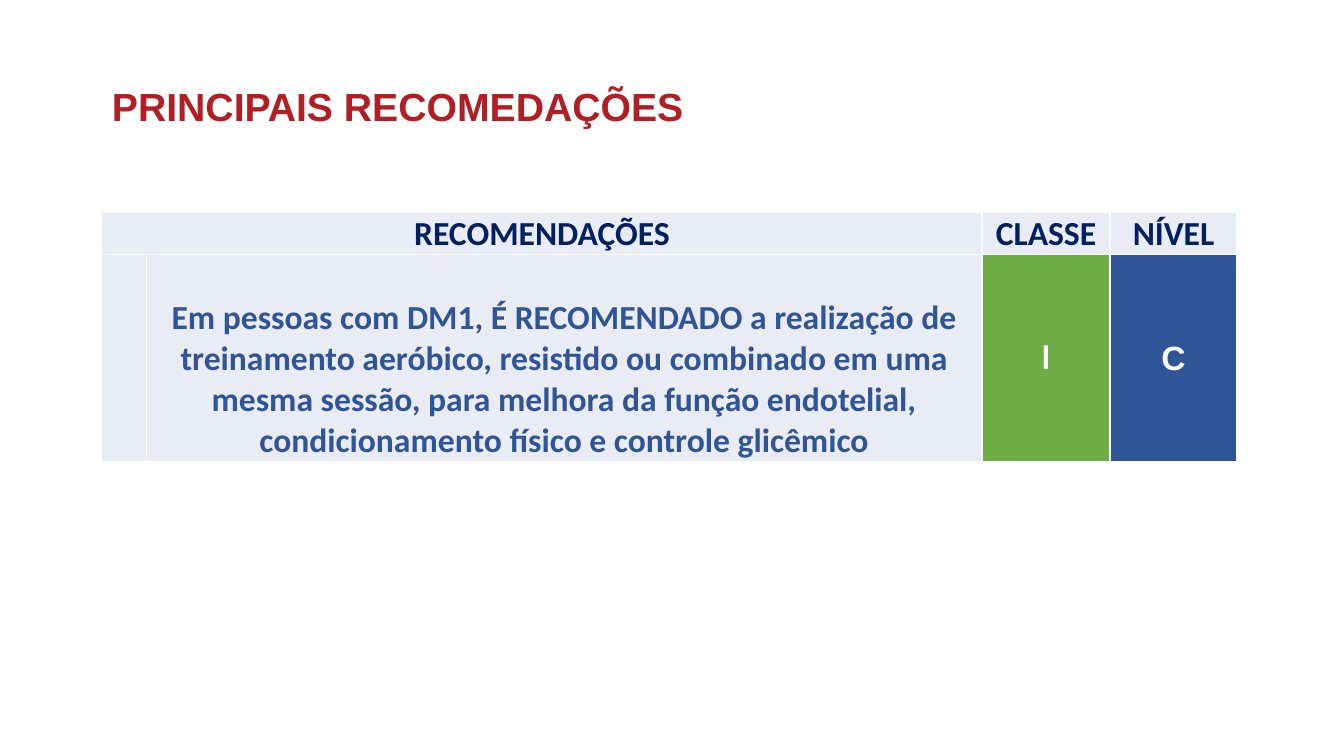
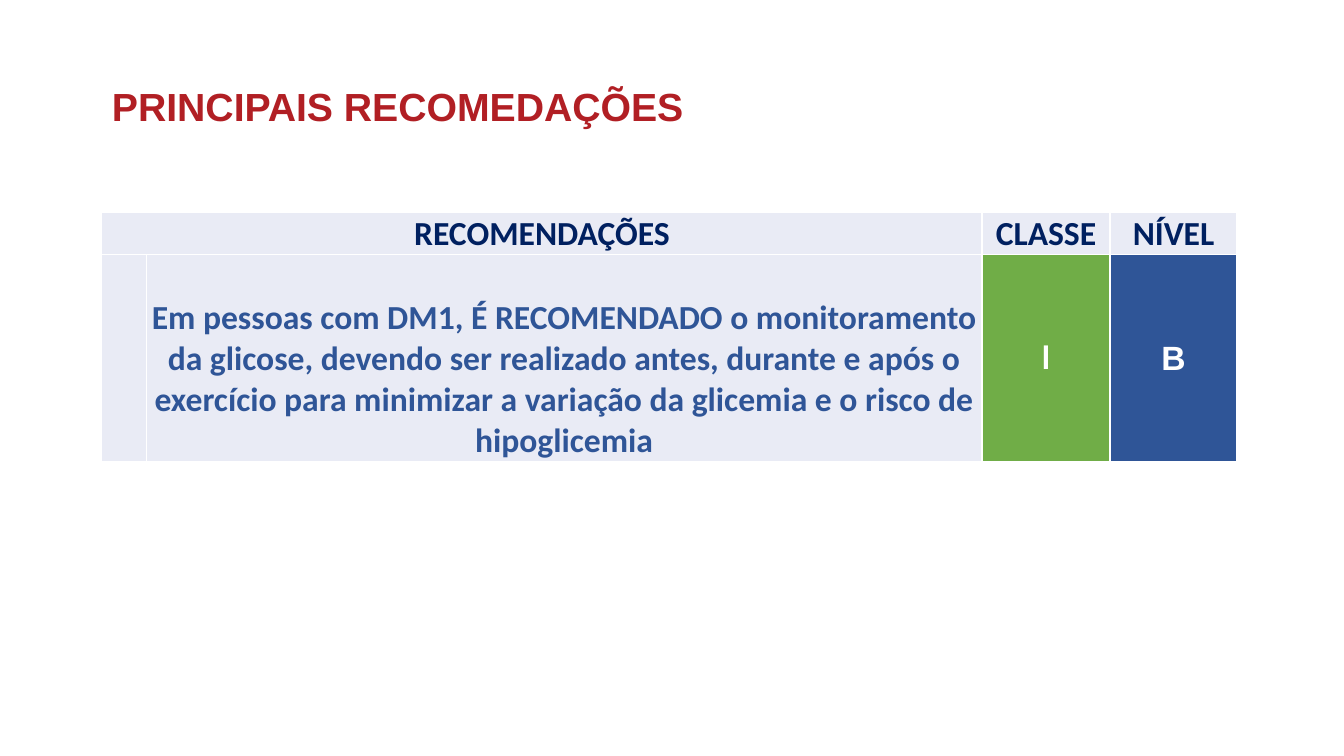
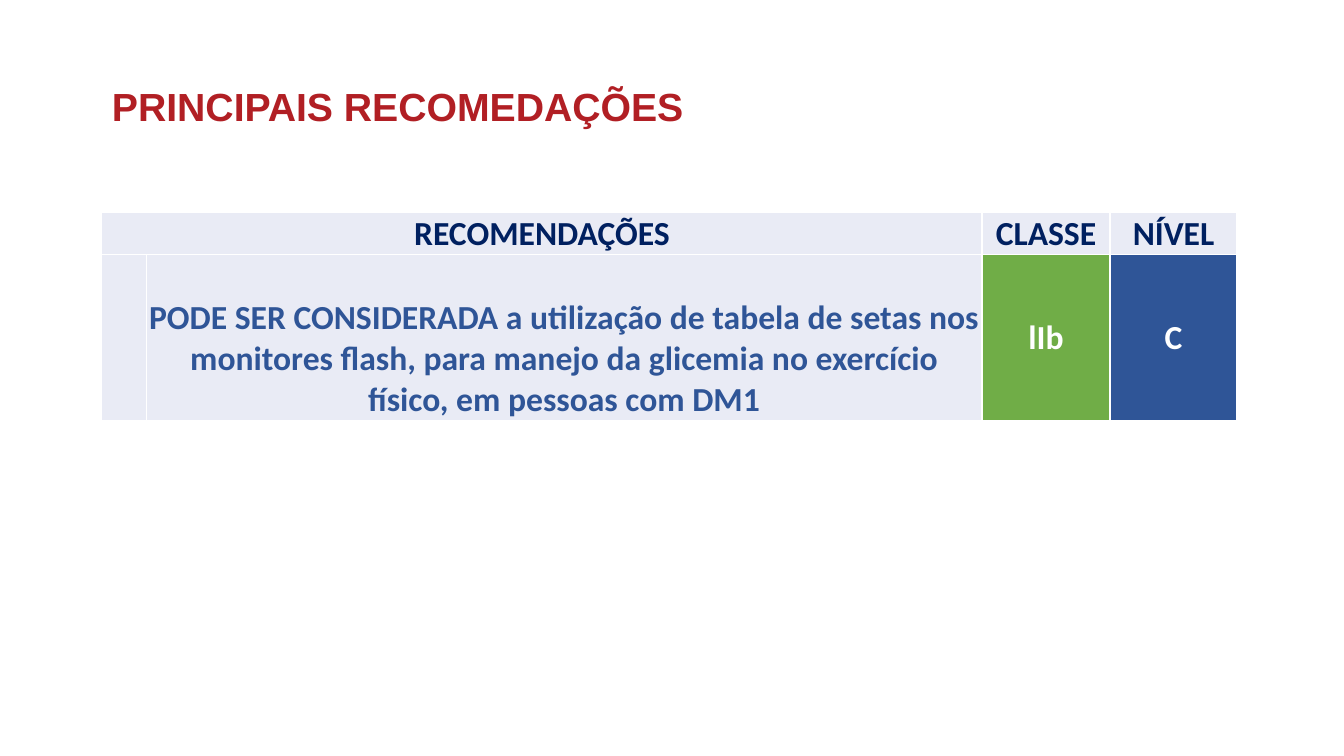
from dataclasses import dataclass

from lxml import etree
from pptx import Presentation
from pptx.dml.color import RGBColor
from pptx.enum.text import MSO_ANCHOR, MSO_AUTO_SIZE, PP_ALIGN
from pptx.oxml.ns import qn
from pptx.slide import Slide
from pptx.table import _Cell
from pptx.text.text import _Paragraph
from pptx.util import Inches, Pt

LEFT, CENTER = PP_ALIGN.LEFT, PP_ALIGN.CENTER
MIDDLE, BOTTOM = MSO_ANCHOR.MIDDLE, MSO_ANCHOR.BOTTOM
NO_AUTOFIT = MSO_AUTO_SIZE.NONE

RED = RGBColor(0xB1, 0x1F, 0x24)
NAVY = RGBColor(0x00, 0x20, 0x60)
BLUE = RGBColor(0x2F, 0x55, 0x97)
GREEN = RGBColor(0x70, 0xAD, 0x47)
PALE = RGBColor(0xE9, 0xEB, 0xF5)
WHITE = RGBColor(0xFF, 0xFF, 0xFF)

SLIDE_W, SLIDE_H = Inches(13.33), Inches(7.5)
TITLE = "PRINCIPAIS RECOMEDAÇÕES"
HEADERS = {1: "RECOMENDAÇÕES", 2: "CLASSE", 3: "NÍVEL"}
BORDERS = ("a:lnL", "a:lnR", "a:lnT", "a:lnB")


def across(percent: float) -> int:
    return round(SLIDE_W * percent / 100)


def down(percent: float) -> int:
    return round(SLIDE_H * percent / 100)


MARGIN, CONTENT_W = across(7.58), across(84.47)
TITLE_TOP, TITLE_H = down(11.07), down(6.53)
TABLE_TOP, LINE_H = down(28.13), down(5.47)
COL_WIDTHS = [across(share) for share in (3.3, 62.19, 9.53, 9.45)]

TITLE_FONT = {"name": "Arial", "size": Pt(28), "bold": True}
CELL_FONT = {"name": "Calibri", "size": Pt(24), "bold": True}
CELL_MARGINS = {
    "margin_left": Inches(0.01),
    "margin_right": Inches(0.01),
    "margin_top": Inches(0.01),
    "margin_bottom": 0,
}


@dataclass(frozen=True)
class Recommendation:
    text: str
    lines: int
    grade: str
    level: str
    level_font: str = "Arial"


RECOMMENDATIONS = (
    Recommendation(
        "Em pessoas com DM1, É RECOMENDADO a realização de treinamento "
        "aeróbico, resistido ou combinado em uma mesma sessão, para melhora "
        "da função endotelial, condicionamento físico e controle glicêmico",
        4, "l", "C",
    ),
    Recommendation(
        "Em pessoas com DM1, É RECOMENDADO o monitoramento da glicose, "
        "devendo ser realizado antes, durante e após o exercício para "
        "minimizar a variação da glicemia e o risco de hipoglicemia",
        4, "l", "B",
    ),
    Recommendation(
        "PODE SER CONSIDERADA a utilização de tabela de setas nos monitores "
        "flash, para manejo da glicemia no exercício físico, em pessoas com DM1",
        3, "lIb", "C", "Calibri",
    ),
)


def write(p: _Paragraph, text: str, align: PP_ALIGN, color: RGBColor, font: dict) -> None:
    p.alignment = align
    r = p.add_run()
    r.text = text
    for name, value in font.items():
        setattr(r.font, name, value)
    r.font.color.rgb = color


def add_title(s: Slide) -> None:
    sp = s.shapes.title
    sp.left, sp.top, sp.width, sp.height = MARGIN, TITLE_TOP, CONTENT_W, TITLE_H
    tf = sp.text_frame
    tf.word_wrap = True
    tf.auto_size = NO_AUTOFIT
    tf.vertical_anchor = MIDDLE
    p = tf.paragraphs[0]
    p.line_spacing = 0.9
    write(p, TITLE, LEFT, RED, TITLE_FONT)


def style_cell(cell: _Cell, fill: RGBColor, anchor: MSO_ANCHOR) -> None:
    cell.fill.solid()
    cell.fill.fore_color.rgb = fill
    cell.vertical_anchor = anchor
    for name, value in CELL_MARGINS.items():
        setattr(cell, name, value)
    tc_pr = cell.fill._xPr
    for i, tag in enumerate(BORDERS):
        ln = etree.Element(qn(tag), w=str(Pt(1)))
        solid = etree.SubElement(ln, qn("a:solidFill"))
        etree.SubElement(solid, qn("a:srgbClr"), val=str(WHITE))
        tc_pr.insert(i, ln)


def add_recommendation(s: Slide, rec: Recommendation) -> None:
    heights = (LINE_H, LINE_H * (rec.lines + 1))
    table = s.shapes.add_table(
        2, len(COL_WIDTHS), MARGIN, TABLE_TOP, sum(COL_WIDTHS), sum(heights)
    ).table
    table.first_row = table.horz_banding = False
    for col, width in zip(table.columns, COL_WIDTHS):
        col.width = width
    for row, height in zip(table.rows, heights):
        row.height = height
    for cell in table.iter_cells():
        style_cell(cell, PALE, BOTTOM)

    table.cell(0, 0).merge(table.cell(0, 1))
    for col, text in HEADERS.items():
        cell = table.cell(0, 0 if col == 1 else col)
        write(cell.text_frame.paragraphs[0], text, CENTER, NAVY, CELL_FONT)

    level_font = CELL_FONT | {"name": rec.level_font}
    body = (
        (rec.text, PALE, BOTTOM, BLUE, CELL_FONT),
        (rec.grade, GREEN, MIDDLE, WHITE, CELL_FONT),
        (rec.level, BLUE, MIDDLE, WHITE, level_font),
    )
    for col, (text, fill, anchor, color, font) in enumerate(body, 1):
        cell = table.cell(1, col)
        cell.fill.fore_color.rgb = fill
        cell.vertical_anchor = anchor
        write(cell.text_frame.paragraphs[0], text, CENTER, color, font)


def main() -> None:
    prs = Presentation()
    prs.slide_width, prs.slide_height = SLIDE_W, SLIDE_H
    title_only = prs.slide_layouts.get_by_name("Title Only")
    for rec in RECOMMENDATIONS:
        s = prs.slides.add_slide(title_only)
        add_title(s)
        add_recommendation(s, rec)
    prs.save("out.pptx")


if __name__ == "__main__":
    main()
